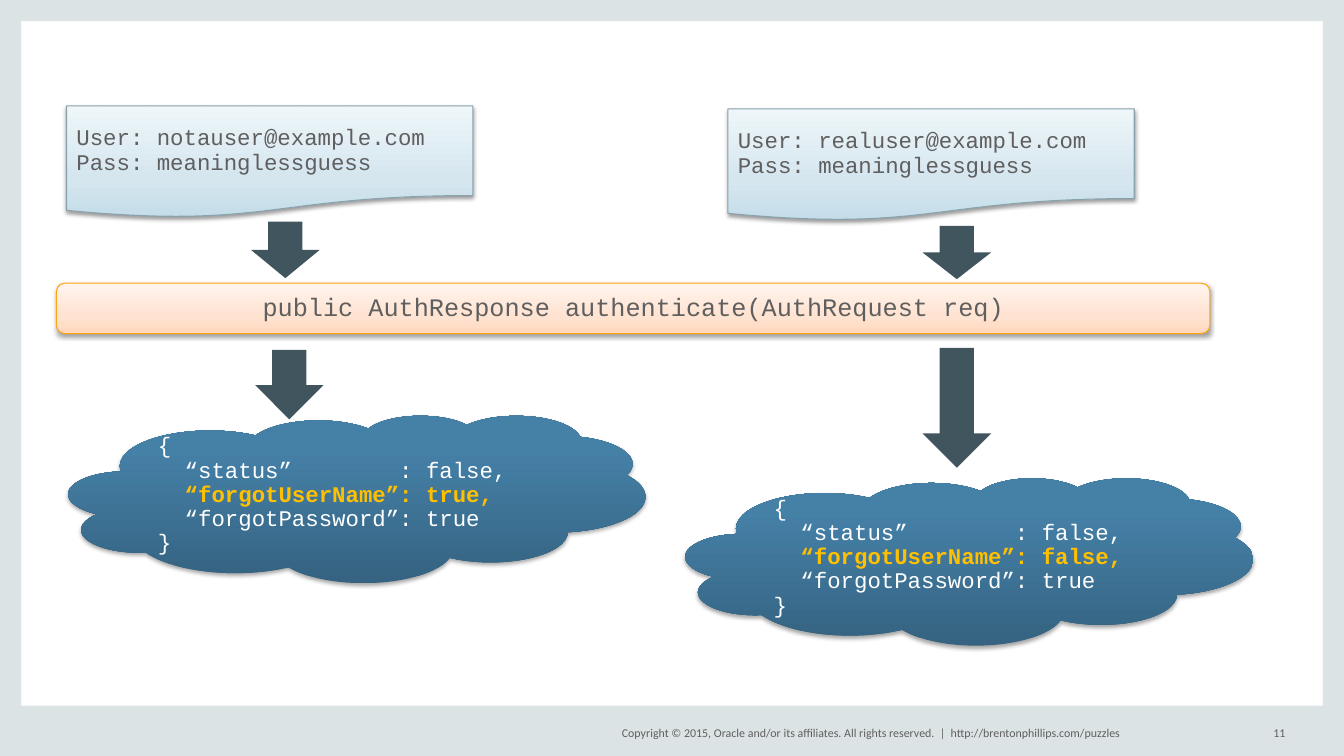
"""Build the slide comparing two authentication requests and their responses."""
from lxml import etree
from pptx import Presentation
from pptx.dml.color import RGBColor
from pptx.enum.shapes import MSO_SHAPE as SHAPE
from pptx.enum.text import MSO_ANCHOR as ANCHOR, PP_ALIGN as ALIGN
from pptx.oxml.ns import qn
from pptx.util import Inches, Pt

WIDTH, HEIGHT = 13.33, 7.5
FRAME = RGBColor(0xDC, 0xE3, 0xE4)
GRAY = RGBColor(0x5F, 0x5F, 0x5F)
WHITE = RGBColor(0xFF, 0xFF, 0xFF)
GOLD = RGBColor(0xFF, 0xC0, 0x00)
SLATE = RGBColor(0x41, 0x55, 0x5E)
BLUE_LINE = RGBColor(0x89, 0xA3, 0xAE)
ORANGE_LINE = RGBColor(0xFF, 0xA3, 0x12)
BLUE_STOPS = [(0, "C4DDE9"), (35, "D5E6EF"), (100, "EEF6F9")]
ORANGE_STOPS = [(0, "FFD8BD"), (35, "FFE3D1"), (100, "FFF4EE")]
CLOUD_STOPS = [(0, "356381"), (80, "4580A7"), (100, "4481AA")]
SOFT_SHADOW, CLOUD_SHADOW = (38, 1.6), (35, 1.8)

BORDERS = [(0, 0, 0.21, HEIGHT), (13.12, 0, 0.21, HEIGHT),
           (0, 7, WIDTH, 0.5), (0, 0, WIDTH, 0.21)]
METHOD = "public AuthResponse authenticate(AuthRequest req)"
METHOD_BOX = (0.56, 2.81, 11.44, 0.5)
FLOWS = [
    {"user": "notauser", "forgot_name": "true",
     "request": (0.66, 1.05, 4.03, 1.11), "cloud": (0.68, 4.12, 5.72, 1.66),
     "arrows": [(2.49, 2.2, 0.68, 0.56), (2.53, 3.47, 0.68, 0.69)]},
    {"user": "realuser", "forgot_name": "false",
     "request": (7.22, 1.08, 4.03, 1.11), "cloud": (6.8, 4.74, 5.63, 1.66),
     "arrows": [(9.15, 2.24, 0.68, 0.53), (9.15, 3.45, 0.68, 1.19)]},
]
FOOTER = [
    ("Copyright © 2015, Oracle and/or its affiliates. All rights reserved.  |",
     5.88, 3.5, ALIGN.RIGHT),
    ("http://brentonphillips.com/puzzles", 9.43, 3, ALIGN.LEFT),
    ("11", 12.33, 0.42, ALIGN.RIGHT),
]


def add_box(slide, kind, box, color=None):
    sp = slide.shapes.add_shape(kind, *map(Inches, box))
    sp.shadow.inherit = False
    sp.line.fill.background()
    if color is not None:
        sp.fill.solid()
        sp.fill.fore_color.rgb = color
    return sp


def add_color(parent, value):
    return etree.SubElement(parent, qn("a:srgbClr"), val=value)


def add_glossy(slide, kind, box, stops, shadow, line=None):
    sp = add_box(slide, kind, box)
    if line is not None:
        sp.line.color.rgb = line
        sp.line.width = Pt(0.75)
    sp.fill.gradient()
    sp.fill.gradient_angle = 90
    sp_pr = sp._element.spPr
    stop_list = sp_pr.find(".//" + qn("a:gsLst"))
    for old in list(stop_list):
        stop_list.remove(old)
    for pos, value in stops:
        add_color(etree.SubElement(stop_list, qn("a:gs"), pos=str(pos * 1000)), value)
    alpha, distance = shadow
    outer = etree.SubElement(sp_pr.find(qn("a:effectLst")), qn("a:outerShdw"),
                             blurRad=str(Pt(3.1)), dist=str(Pt(distance)),
                             dir="5400000", rotWithShape="0")
    etree.SubElement(add_color(outer, "000000"), qn("a:alpha"), val=str(alpha * 1000))
    return sp


def write(sp, lines, size, color, align=ALIGN.LEFT, font="Courier New", spacing=0.9):
    tf = sp.text_frame
    tf.vertical_anchor = ANCHOR.MIDDLE
    tf.text = "\n".join(lines)
    for p in tf.paragraphs:
        p.alignment = align
        p.line_spacing = spacing
        for r in p.runs:
            r.font.name = font
            r.font.size = Pt(size)
            r.font.color.rgb = color


def add_request(slide, flow):
    sp = add_glossy(slide, SHAPE.FLOWCHART_DOCUMENT, flow["request"],
                    BLUE_STOPS, SOFT_SHADOW, BLUE_LINE)
    write(sp, [f"User: {flow['user']}@example.com", "Pass: meaninglessguess"], 16, GRAY)


def add_response(slide, flow):
    sp = add_glossy(slide, SHAPE.CLOUD, flow["cloud"], CLOUD_STOPS, CLOUD_SHADOW)
    lines = ["{", "  “status”        : false,",
             f"  “forgotUserName”: {flow['forgot_name']},",
             "  “forgotPassword”: true", "}"]
    write(sp, lines, 16, WHITE)
    r = sp.text_frame.paragraphs[2].runs[0]
    r.font.bold = True
    r.font.color.rgb = GOLD


def add_footer(slide, text, left, width, align):
    sp = slide.shapes.add_textbox(*map(Inches, (left, 7.17, width, 0.2)))
    tf = sp.text_frame
    tf.word_wrap = False
    tf.margin_left = tf.margin_right = tf.margin_top = tf.margin_bottom = 0
    write(sp, [text], 8.5, GRAY, align, "Calibri", 1.0)


def main():
    prs = Presentation()
    prs.slide_width, prs.slide_height = Inches(WIDTH), Inches(HEIGHT)
    slide = prs.slides.add_slide(prs.slide_layouts[6])
    for border in BORDERS:
        add_box(slide, SHAPE.RECTANGLE, border, FRAME)
    for flow in FLOWS:
        add_request(slide, flow)
    method = add_glossy(slide, SHAPE.ROUNDED_RECTANGLE, METHOD_BOX,
                        ORANGE_STOPS, SOFT_SHADOW, ORANGE_LINE)
    write(method, [METHOD], 18, GRAY, ALIGN.CENTER)
    for flow in FLOWS:
        add_response(slide, flow)
        for arrow in flow["arrows"]:
            add_box(slide, SHAPE.DOWN_ARROW, arrow, SLATE)
    for item in FOOTER:
        add_footer(slide, *item)
    prs.save("out.pptx")


if __name__ == "__main__":
    main()
